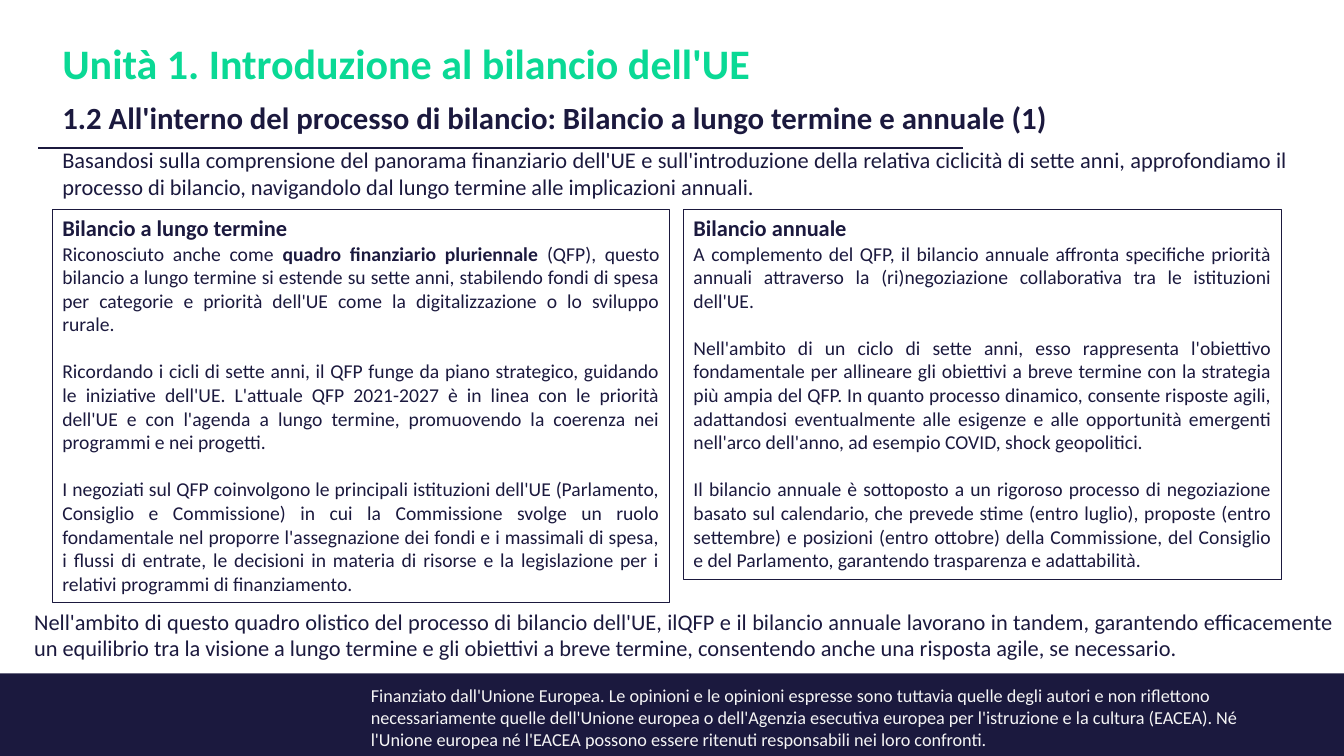
from dataclasses import dataclass

from lxml import etree
from pptx import Presentation, util as u
from pptx.dml.color import RGBColor
from pptx.enum import shapes, text
from pptx.oxml.ns import qn

NAVY = RGBColor(0x1B, 0x19, 0x3E)
GREEN = RGBColor(0x0A, 0xD9, 0x95)
PALE = RGBColor(0xF5, 0xF5, 0xF5)
FONT = "Calibri"
LEFT, JUSTIFY = text.PP_ALIGN.LEFT, text.PP_ALIGN.JUSTIFY


@dataclass
class Box:
    left: float
    top: float
    width: float
    height: float

    def lengths(self) -> list[u.Length]:
        return [u.Inches(n) for n in (self.left, self.top, self.width, self.height)]


@dataclass
class Panel:
    box: Box
    heading: str
    paragraphs: list[list[tuple[str, bool]]]  # runs: wording, bold


@dataclass
class Note:
    box: Box
    wording: str
    size: float = 16
    color: RGBColor = NAVY
    align: text.PP_ALIGN = JUSTIFY


def add_paragraph(tf, runs: list[tuple[str, bool]], *, size: float, color: RGBColor = NAVY,
                  align: text.PP_ALIGN = JUSTIFY, before: float = 0,
                  spacing: float = 1.0) -> None:
    """Fill the empty first paragraph, or append a new one."""
    p = tf.paragraphs[0] if not tf.paragraphs[0].runs else tf.add_paragraph()
    p.alignment, p.space_before, p.line_spacing = align, u.Pt(before), spacing
    for wording, bold in runs:
        r = p.add_run()
        r.text = wording
        r.font.name, r.font.size, r.font.bold = FONT, u.Pt(size), bold
        r.font.color.rgb = color


def add_text_frame(s, box: Box, anchor: text.MSO_ANCHOR = text.MSO_ANCHOR.TOP):
    tf = s.shapes.add_textbox(*box.lengths()).text_frame
    tf.word_wrap, tf.vertical_anchor = True, anchor
    return tf


def add_rectangle(s, box: Box):
    sp = s.shapes.add_shape(shapes.MSO_SHAPE.RECTANGLE, *box.lengths())
    sp.shadow.inherit = False
    return sp


def add_note(s, note: Note) -> None:
    add_paragraph(add_text_frame(s, note.box), [(note.wording, False)],
                  size=note.size, color=note.color, align=note.align)


def add_panel(s, panel: Panel) -> None:
    sp = add_rectangle(s, panel.box)
    sp.fill.background()
    sp.line.color.rgb, sp.line.width = NAVY, u.Pt(0.75)
    tf = sp.text_frame
    tf.word_wrap, tf.vertical_anchor = True, text.MSO_ANCHOR.TOP
    add_paragraph(tf, [(panel.heading, True)], size=16)
    for i, runs in enumerate(panel.paragraphs):
        add_paragraph(tf, runs, size=14, before=17 if i else 0)


PANELS = [
    Panel(Box(0.52, 2.08, 6.12, 3.9), "Bilancio a lungo termine", [
        [("Riconosciuto anche come ", False),
         ("quadro finanziario pluriennale ", True),
         ("(QFP), questo bilancio a lungo termine si estende su sette anni, stabilendo fondi "
          "di spesa per categorie e priorità dell'UE come la digitalizzazione o lo sviluppo "
          "rurale.", False)],
        [("Ricordando i cicli di sette anni, il QFP funge da piano strategico, guidando le "
          "iniziative dell'UE. L'attuale QFP 2021-2027 è in linea con le priorità dell'UE e "
          "con l'agenda a lungo termine, promuovendo la coerenza nei programmi e nei "
          "progetti.", False)],
        [("I negoziati sul QFP coinvolgono le principali istituzioni dell'UE (Parlamento, "
          "Consiglio e Commissione) in cui la Commissione svolge un ruolo fondamentale nel "
          "proporre l'assegnazione dei fondi e i massimali di spesa, i flussi di entrate, le "
          "decisioni in materia di risorse e la legislazione per i relativi programmi di "
          "finanziamento.", False)],
    ]),
    Panel(Box(6.78, 2.08, 5.93, 3.67), "Bilancio annuale", [
        [("A complemento del QFP, il bilancio annuale affronta specifiche priorità annuali "
          "attraverso la (ri)negoziazione collaborativa tra le istituzioni dell'UE.", False)],
        [("Nell'ambito di un ciclo di sette anni, esso rappresenta l'obiettivo fondamentale "
          "per allineare gli obiettivi a breve termine con la strategia più ampia del QFP. In "
          "quanto processo dinamico, consente risposte agili, adattandosi eventualmente alle "
          "esigenze e alle opportunità emergenti nell'arco dell'anno, ad esempio COVID, shock "
          "geopolitici.", False)],
        [("Il bilancio annuale è sottoposto a un rigoroso processo di negoziazione basato sul "
          "calendario, che prevede stime (entro luglio), proposte (entro settembre) e "
          "posizioni (entro ottobre) della Commissione, del Consiglio e del Parlamento, "
          "garantendo trasparenza e adattabilità.", False)],
    ]),
]

DISCLAIMER = Note(
    Box(3.58, 6.74, 8.84, 0.76),
    "Finanziato dall'Unione Europea. Le opinioni e le opinioni espresse sono tuttavia quelle "
    "degli autori e non riflettono necessariamente quelle dell'Unione europea o dell'Agenzia "
    "esecutiva europea per l'istruzione e la cultura (EACEA). Né l'Unione europea né l'EACEA "
    "possono essere ritenuti responsabili nei loro confronti.",
    size=13, color=PALE, align=LEFT)
INTRO = Note(
    Box(0.52, 1.4, 12.35, 0.64),
    "Basandosi sulla comprensione del panorama finanziario dell'UE e sull'introduzione della "
    "relativa ciclicità di sette anni, approfondiamo il processo di bilancio, navigandolo dal "
    "lungo termine alle implicazioni annuali.")
CLOSING = Note(
    Box(0.24, 5.98, 13.09, 0.64),
    "Nell'ambito di questo quadro olistico del processo di bilancio dell'UE, ilQFP e il "
    "bilancio annuale lavorano in tandem, garantendo efficacemente un equilibrio tra la "
    "visione a lungo termine e gli obiettivi a breve termine, consentendo anche una risposta "
    "agile, se necessario.")


def main() -> None:
    prs = Presentation()
    prs.slide_width, prs.slide_height = u.Inches(13.33), u.Inches(7.5)
    s = prs.slides.add_slide(prs.slide_layouts[6])

    # Footer band
    band = add_rectangle(s, Box(0, 6.68, 13.33, 0.82))
    band.fill.solid()
    band.fill.fore_color.rgb = NAVY
    band.line.fill.background()
    add_note(s, DISCLAIMER)

    # Rule under the titles
    rule = s.shapes.add_connector(shapes.MSO_CONNECTOR.STRAIGHT, u.Inches(0.38),
                                  u.Inches(1.47), u.Inches(9.55), u.Inches(1.47))
    rule.line.color.rgb, rule.line.width = NAVY, u.Pt(1)
    etree.SubElement(rule._element.spPr, qn("a:effectLst"))

    # Titles
    tf = add_text_frame(s, Box(0.52, 0.5, 9.98, 0.9), text.MSO_ANCHOR.BOTTOM)
    add_paragraph(tf, [("Unità 1. Introduzione al bilancio dell'UE", True)],
                  size=30, color=GREEN, spacing=0.9)
    add_paragraph(tf, [("1.2 All'interno del processo di bilancio: Bilancio a lungo termine "
                        "e annuale (1)", True)],
                  size=22, align=LEFT, before=10, spacing=0.9)

    # Panels with the text above and below them
    for panel in PANELS:
        add_panel(s, panel)
    for note in (INTRO, CLOSING):
        add_note(s, note)

    prs.save("out.pptx")


if __name__ == "__main__":
    main()
